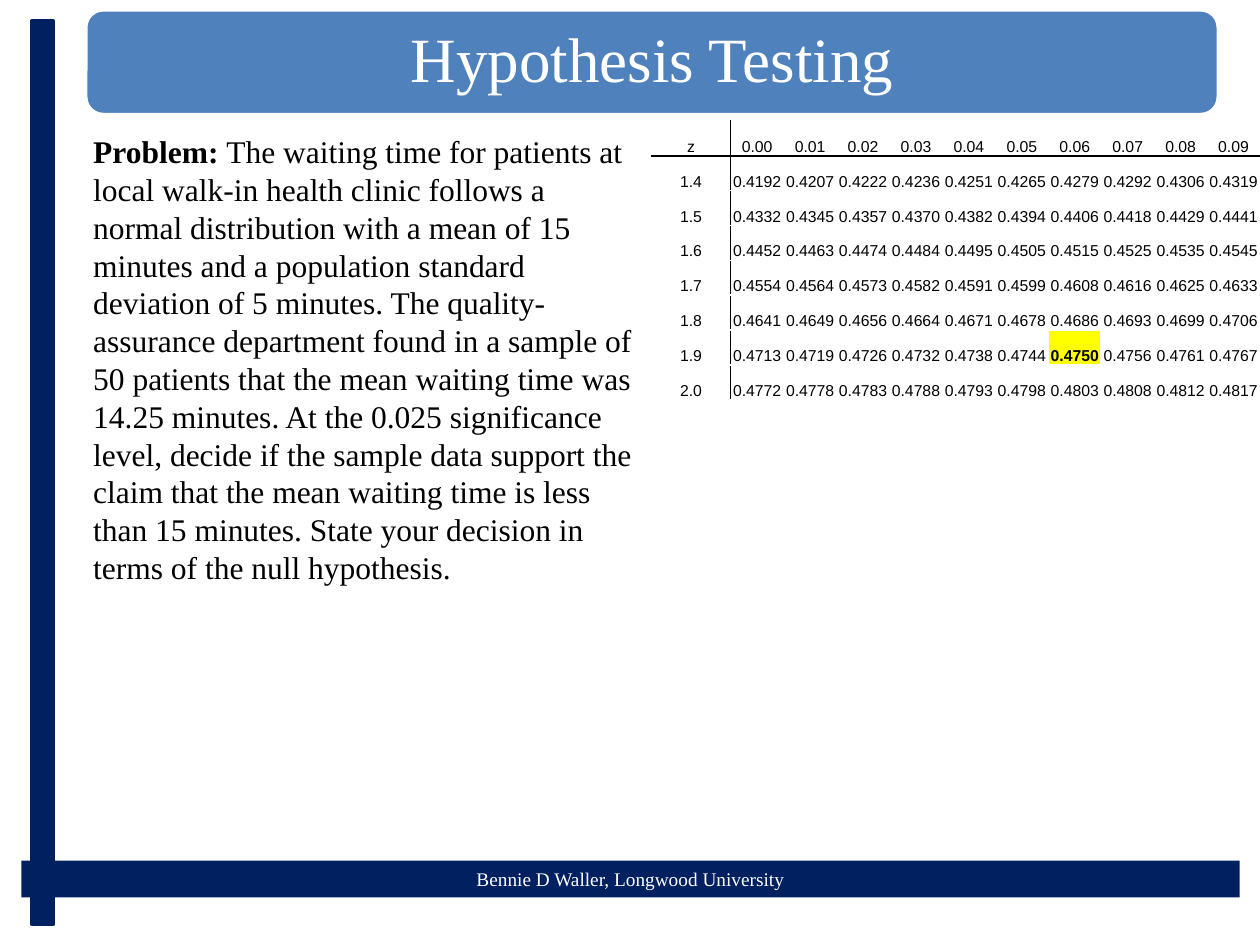
from lxml.etree import SubElement
from pptx import Presentation
from pptx.dml.color import RGBColor
from pptx.enum.shapes import MSO_SHAPE as Shape
from pptx.enum.text import MSO_ANCHOR as Anchor, MSO_AUTO_SIZE as AutoSize, PP_ALIGN as Align
from pptx.oxml.ns import qn
from pptx.util import Cm, Pt

COLORS = {"navy": "002060", "blue": "4F81BD", "white": "FFFFFF",
          "black": "000000", "highlight": "FFFF00"}
SERIF, SANS = "Times New Roman", "Arial"
PROBLEM = (
    "The waiting time for patients at local walk-in health clinic follows a normal "
    "distribution with a mean of 15 minutes and a population standard deviation of "
    "5 minutes. The quality-assurance department found in a sample of 50 patients that "
    "the mean waiting time was 14.25 minutes. At the 0.025 significance level, decide if "
    "the sample data support the claim that the mean waiting time is less than 15 "
    "minutes. State your decision in terms of the null hypothesis."
)
Z_ROWS = [line.split() for line in """\
z 0.00 0.01 0.02 0.03 0.04 0.05 0.06 0.07 0.08 0.09
1.4 0.4192 0.4207 0.4222 0.4236 0.4251 0.4265 0.4279 0.4292 0.4306 0.4319
1.5 0.4332 0.4345 0.4357 0.4370 0.4382 0.4394 0.4406 0.4418 0.4429 0.4441
1.6 0.4452 0.4463 0.4474 0.4484 0.4495 0.4505 0.4515 0.4525 0.4535 0.4545
1.7 0.4554 0.4564 0.4573 0.4582 0.4591 0.4599 0.4608 0.4616 0.4625 0.4633
1.8 0.4641 0.4649 0.4656 0.4664 0.4671 0.4678 0.4686 0.4693 0.4699 0.4706
1.9 0.4713 0.4719 0.4726 0.4732 0.4738 0.4744 0.4750 0.4756 0.4761 0.4767
2.0 0.4772 0.4778 0.4783 0.4788 0.4793 0.4798 0.4803 0.4808 0.4812 0.4817""".splitlines()]
CRITICAL_AREA = "0.4750"


def rgb(name):
    """Return the named palette colour."""
    return RGBColor.from_string(COLORS[name])


def style(run, size, color, face=SERIF, bold=False):
    """Set the font of a run."""
    font = run.font
    font.name, font.size, font.bold = face, Pt(size), bold
    font.color.rgb = rgb(color)


def add_block(slide, kind, box, color, edge=None, edge_width=0):
    """Add a filled shape in a box, with an optional edge."""
    block = slide.shapes.add_shape(kind, *map(Cm, box))
    block.shadow.inherit = False
    block.fill.solid()
    block.fill.fore_color.rgb = rgb(color)
    if edge:
        block.line.color.rgb = rgb(edge)
        block.line.width = Pt(edge_width)
    else:
        block.line.fill.background()
    return block


def add_frame(slide, footer_box, side_box):
    """Add the footer band with its author line and the side bar."""
    footer = add_block(slide, Shape.RECTANGLE, footer_box, "navy")
    footer.text_frame.text = "Bennie D Waller, Longwood University"
    author = footer.text_frame.paragraphs[0]
    author.alignment = Align.CENTER
    style(author.runs[0], 11, "white")
    add_block(slide, Shape.RECTANGLE, side_box, "navy", "navy", 2.5)


def add_banner(slide, box):
    """Add the rounded banner and lay the slide title over it."""
    add_block(slide, Shape.ROUNDED_RECTANGLE, box, "blue", "white", 2)
    left, top, width, height = box
    inset = 0.1
    title = slide.shapes.title
    title.left, title.top = Cm(left + inset), Cm(top + inset)
    title.width, title.height = Cm(width - 2 * inset), Cm(height - 2 * inset)
    frame = title.text_frame
    frame.text = "Hypothesis Testing"
    frame.auto_size = AutoSize.NONE
    frame.vertical_anchor = Anchor.MIDDLE
    frame.margin_left = frame.margin_right = Cm(0.38)
    frame.margin_top = frame.margin_bottom = Cm(0.18)
    heading = frame.paragraphs[0]
    heading.alignment, heading.line_spacing = Align.CENTER, 0.9
    style(heading.runs[0], 36, "white")
    title.element.getparent().append(title.element)


def add_problem(slide, box):
    """Add the problem statement with its bold label."""
    frame = slide.shapes.add_textbox(*map(Cm, box)).text_frame
    frame.word_wrap = True
    statement = frame.paragraphs[0]
    for words, bold in (("Problem: ", True), (PROBLEM, False)):
        run = statement.add_run()
        run.text = words
        style(run, 18, "black", bold=bold)


def add_borders(cell, sides):
    """Draw black one-point borders on the given sides of a cell."""
    properties = cell._tc.get_or_add_tcPr()
    for side in sides:
        line = SubElement(properties, qn(f"a:ln{side}"), w=str(Pt(1)))
        fill = SubElement(line, qn("a:solidFill"))
        SubElement(fill, qn("a:srgbClr"), val=COLORS["black"])


def add_z_table(slide, box):
    """Add the table of normal areas, ruled below its head and beside z."""
    left, top, width, height = box
    z_width = 1.6
    area_width = (width - z_width) / (len(Z_ROWS[0]) - 1)
    table = slide.shapes.add_table(len(Z_ROWS), len(Z_ROWS[0]), *map(Cm, box)).table
    table.first_row = table.horz_banding = False
    for index, column in enumerate(table.columns):
        column.width = Cm(area_width if index else z_width)
    for row in table.rows:
        row.height = Cm(height / len(Z_ROWS))
    for r, values in enumerate(Z_ROWS):
        for c, value in enumerate(values):
            cell = table.cell(r, c)
            critical = value == CRITICAL_AREA
            add_borders(cell, {0: "R", 1: "L"}.get(c, "") + {0: "B", 1: "T"}.get(r, ""))
            cell.fill.solid()
            cell.fill.fore_color.rgb = rgb("highlight" if critical else "white")
            cell.margin_left = cell.margin_right = cell.margin_top = Cm(0.02)
            cell.margin_bottom = 0
            cell.vertical_anchor = Anchor.BOTTOM
            cell.text_frame.text = value
            entry = cell.text_frame.paragraphs[0]
            entry.alignment = Align.CENTER
            style(entry.runs[0], 9, "black", SANS, critical)


def main():
    """Build and save the slide."""
    deck = Presentation()
    deck.slide_width, deck.slide_height = Cm(25.4), Cm(19.05)
    slide = deck.slides.add_slide(deck.slide_layouts.get_by_name("Title Only"))
    add_frame(slide, (0.43, 17.35, 24.56, 0.74), (0.64, 0.43, 0.43, 18.2))
    add_banner(slide, (1.73, 0.2, 22.83, 2.11))
    add_problem(slide, (1.63, 2.54, 11.5, 9.5))
    add_z_table(slide, (13.13, 2.44, 12.27, 5.62))
    deck.save("out.pptx")


if __name__ == "__main__":
    main()
